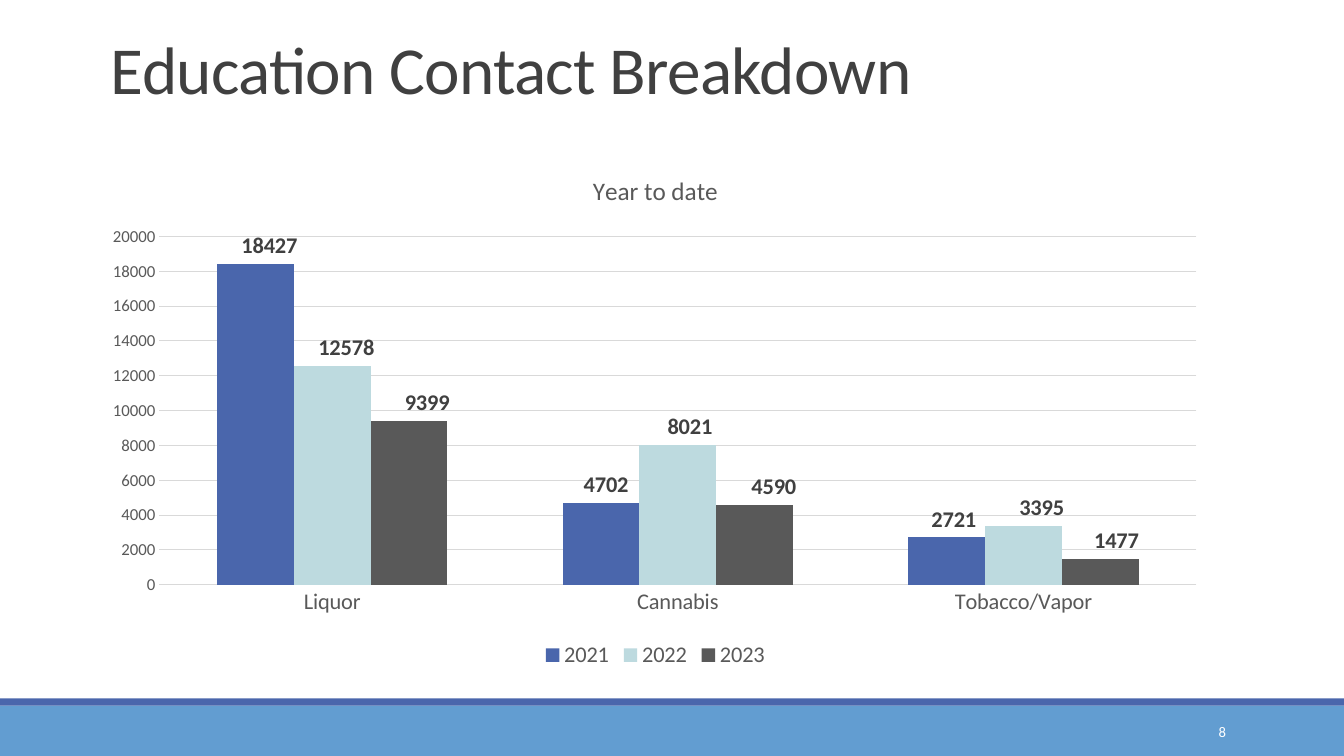
from dataclasses import dataclass

from lxml import etree
from pptx import Presentation
from pptx.chart.data import CategoryChartData
from pptx.dml.color import RGBColor
from pptx.enum import chart as ch, shapes, text
from pptx.oxml import ns
from pptx.util import Inches, Pt

TITLE = "Education Contact Breakdown"
HEAD = "Year to date"
PAGE = "8"
CATS = ["Liquor", "Cannabis", "Tobacco/Vapor"]
ROWS = {
    "2021": [18427, 4702, 2721],
    "2022": [12578, 8021, 3395],
    "2023": [9399, 4590, 1477],
}
NUDGE = {
    "2021": [0.14, 0.05, 0.07],
    "2022": [0.14, 0.12, 0.18],
    "2023": [0.18, 0.19, 0.16],
}
BOX = (0.91, 1.52, 11.18, 5.16)
PLOT = {"x": 0.06, "y": 0.16, "w": 0.92, "h": 0.67}


@dataclass(frozen=True)
class Theme:
    font: str = "Calibri"
    dark: str = "404040"
    gray: str = "595959"
    grid: str = "D9D9D9"
    white: str = "FFFFFF"
    blue: str = "4A66AC"
    sky: str = "629DD1"
    bars: tuple = ("4A66AC", "BDDADF", "595959")
    big: float = 48
    head: float = 18
    mid: float = 16
    small: float = 12
    page: float = 10.5


T = Theme()


def rgb(code):
    return RGBColor.from_string(code)


def style(font, size, color, bold=False):
    font.name, font.size, font.bold = T.font, Pt(size), bold
    font.color.rgb = rgb(color)


def write(frame, words, size, color, anchor, align=text.PP_ALIGN.LEFT, space=None, track=0):
    frame.word_wrap = True
    frame.auto_size = text.MSO_AUTO_SIZE.NONE
    frame.vertical_anchor = anchor
    para = frame.paragraphs[0]
    para.alignment = align
    para.line_spacing = space
    run = para.add_run()
    run.text = words
    style(run.font, size, color)
    if track:
        run.font._element.set("spc", str(int(track * 100)))


def place(shape, *box):
    shape.left, shape.top, shape.width, shape.height = map(Inches, box)


def band(slide, top, tall, color):
    bar = slide.shapes.add_shape(
        shapes.MSO_SHAPE.RECTANGLE, 0, Inches(top), Inches(13.33), Inches(tall))
    bar.shadow.inherit = False
    bar.fill.solid()
    bar.fill.fore_color.rgb = rgb(color)
    bar.line.fill.background()


def layout(**parts):
    root = etree.Element(ns.qn("c:layout"))
    man = etree.SubElement(root, ns.qn("c:manualLayout"))
    for tag, val in parts.items():
        etree.SubElement(man, ns.qn("c:" + tag)).set("val", str(val))
    return root


def label(series, shifts):
    tags = series.data_labels
    tags.show_value = True
    tags.position = ch.XL_LABEL_POSITION.OUTSIDE_END
    style(tags.font, T.mid, T.dark, True)
    for i in range(len(shifts)):
        tag = series.points[i].data_label
        style(tag.font, T.mid, T.dark, True)
        tag.position = ch.XL_LABEL_POSITION.OUTSIDE_END
    for node, shift in zip(series._element.iter(ns.qn("c:dLbl")), shifts):
        node.insert(1, layout(x=round(shift / BOX[2], 4), y=0))


def draw(slide):
    data = CategoryChartData()
    data.categories = CATS
    for name, vals in ROWS.items():
        data.add_series(name, vals)
    chart = slide.shapes.add_chart(
        ch.XL_CHART_TYPE.COLUMN_CLUSTERED, *map(Inches, BOX), data).chart
    style(chart.font, T.small, T.gray)

    chart.has_title = True
    chart.chart_title.include_in_layout = False
    write(chart.chart_title.text_frame, HEAD, T.head, T.gray,
          text.MSO_ANCHOR.MIDDLE, text.PP_ALIGN.CENTER)

    chart.has_legend = True
    chart.legend.position = ch.XL_LEGEND_POSITION.BOTTOM
    chart.legend.include_in_layout = False
    style(chart.legend.font, T.mid, T.gray)

    for axis, size in ((chart.category_axis, T.mid), (chart.value_axis, T.small)):
        axis.major_tick_mark = axis.minor_tick_mark = ch.XL_TICK_MARK.NONE
        axis.format.line.fill.background()
        style(axis.tick_labels.font, size, T.gray)
    scale = chart.value_axis
    scale.minimum_scale, scale.maximum_scale, scale.major_unit = 0, 20000, 2000
    scale.has_major_gridlines = True
    scale.major_gridlines.format.line.color.rgb = rgb(T.grid)
    scale.major_gridlines.format.line.width = Pt(0.75)

    plot = chart.plots[0]
    plot.gap_width, plot.overlap, plot.vary_by_categories = 150, 0, False
    for series, color in zip(plot.series, T.bars):
        series.format.fill.solid()
        series.format.fill.fore_color.rgb = rgb(color)
        label(series, NUDGE[series.name])

    area = chart._chartSpace.find(".//" + ns.qn("c:plotArea"))
    for old in area.findall(ns.qn("c:layout")):
        area.remove(old)
    area.insert(0, layout(layoutTarget="inner", xMode="edge", yMode="edge", **PLOT))


def main():
    deck = Presentation()
    deck.slide_width, deck.slide_height = Inches(13.33), Inches(7.5)
    slide = deck.slides.add_slide(deck.slide_layouts[5])
    band(slide, 7, 0.5, T.sky)
    band(slide, 6.93, 0.07, T.blue)

    title = slide.shapes.title
    place(title, 1, 0.31, 11, 0.81)
    write(title.text_frame, TITLE, T.big, T.dark, text.MSO_ANCHOR.BOTTOM,
          space=0.85, track=-0.5)
    draw(slide)
    page = slide.shapes.add_textbox(0, 0, 0, 0)
    place(page, 10.83, 7.06, 1.43, 0.4)
    write(page.text_frame, PAGE, T.page, T.white, text.MSO_ANCHOR.MIDDLE,
          text.PP_ALIGN.RIGHT)
    deck.save("out.pptx")


if __name__ == "__main__":
    main()
